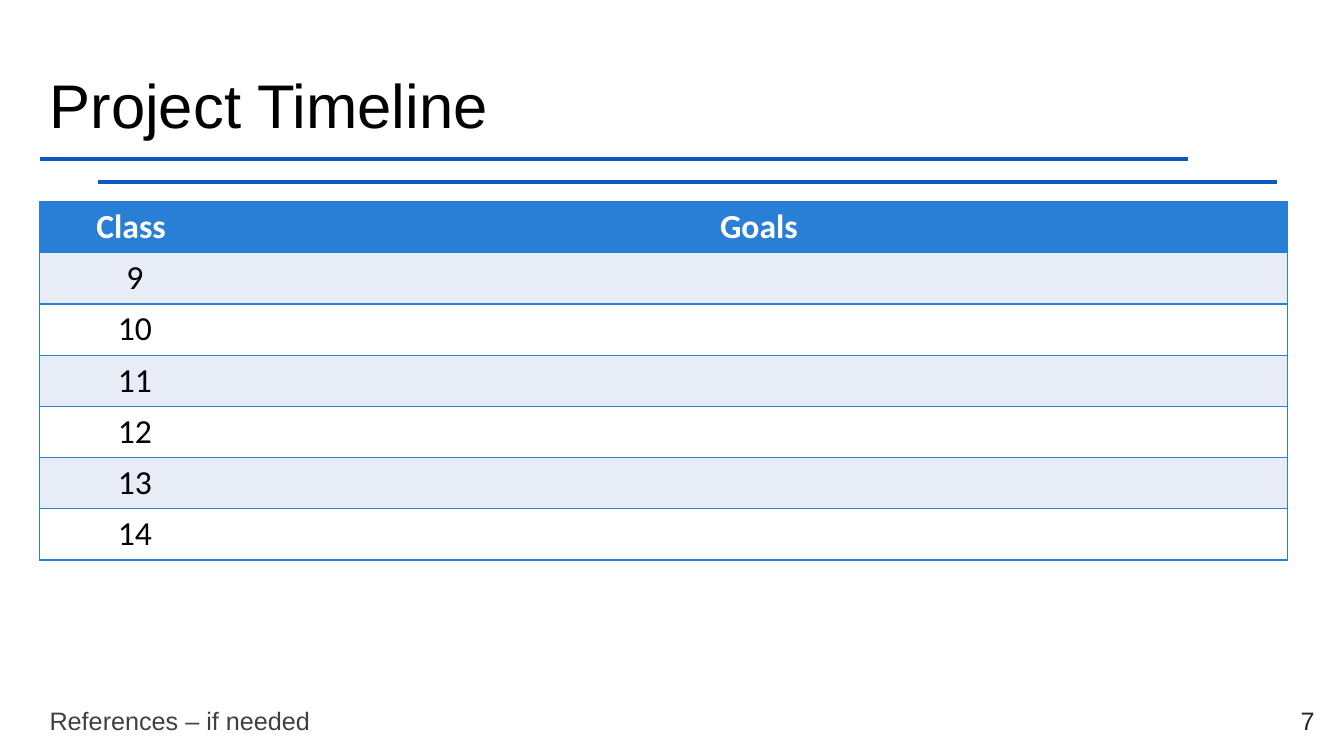
import pptx
import pptx.dml.color
import pptx.enum.shapes
import pptx.enum.text
import pptx.oxml
import pptx.oxml.ns
import pptx.util
from dataclasses import dataclass
from pptx.util import Cm

TITLE = "Project Timeline"
REFERENCES = "References – if needed"
PAGE_NUMBER = "7"
TIMELINE = [
    ("Class ", "Goals"),
    ("9", ""),
    ("10", ""),
    ("11", ""),
    ("12", ""),
    ("13", ""),
    ("14", ""),
]


@dataclass(frozen=True)
class Theme:
    heading_font: str = "Arial"
    table_font: str = "Calibri"
    title_size: int = 44
    table_size: int = 24
    footer_size: int = 18
    rule_width: int = 3
    border_width: int = 1
    black: str = "000000"
    white: str = "FFFFFF"
    rule: str = "0E58C4"
    accent: str = "297FD5"
    band: str = "E8ECF7"
    reference: str = "404040"
    number: str = "262626"


THEME = Theme()
ALIGN = pptx.enum.text.PP_ALIGN

SLIDE_WIDTH, SLIDE_HEIGHT = 33.87, 19.05
LEFT = 1.0
CONTENT_WIDTH = 32.38
NUMBER_WIDTH = 1.57
TITLE_TOP, TITLE_HEIGHT = 0.89, 3.68
FOOTER_TOP, FOOTER_HEIGHT = 17.65, 1.02
RULES = [(LEFT, 29.95, 4.0), (2.47, 32.19, 4.58)]  # start, end, height on slide
TABLE_TOP = 5.08
COLUMN_WIDTHS = (4.8, 26.65)
ROW_HEIGHT = 1.29


def color(value):
    return pptx.dml.color.RGBColor.from_string(value)


def add_text(paragraph, text, font, size, text_color, bold=False):
    run = paragraph.add_run()
    run.text = text
    run.font.name = font
    run.font.size = pptx.util.Pt(size)
    run.font.bold = bold
    run.font.color.rgb = color(text_color)


def add_label(slide, text, box, size, text_color, alignment=ALIGN.LEFT):
    frame = slide.shapes.add_textbox(*map(Cm, box)).text_frame
    frame.word_wrap = True
    frame.vertical_anchor = pptx.enum.text.MSO_ANCHOR.MIDDLE
    paragraph = frame.paragraphs[0]
    paragraph.alignment = alignment
    add_text(paragraph, text, THEME.heading_font, size, text_color)
    return paragraph


def add_rule(slide, start, end, height):
    rule = slide.shapes.add_connector(
        pptx.enum.shapes.MSO_CONNECTOR.STRAIGHT, Cm(start), Cm(height), Cm(end), Cm(height))
    rule.line.color.rgb = color(THEME.rule)
    rule.line.width = pptx.util.Pt(THEME.rule_width)
    properties = rule._element.spPr
    properties.append(properties.makeelement(pptx.oxml.ns.qn("a:effectLst"), {}))


def set_borders(cell, visible_sides):
    """Draw the given sides of a cell and hide the others."""
    properties = cell._tc.get_or_add_tcPr()
    width = pptx.util.Pt(THEME.border_width)
    for side in "LRTB":
        if side in visible_sides:
            fill = f'<a:solidFill><a:srgbClr val="{THEME.accent}"/></a:solidFill>'
        else:
            fill = "<a:noFill/>"
        properties.append(pptx.oxml.parse_xml(
            f'<a:ln{side} {pptx.oxml.ns.nsdecls("a")} w="{width}">{fill}</a:ln{side}>'))


def add_timeline(slide):
    table = slide.shapes.add_table(
        len(TIMELINE), len(COLUMN_WIDTHS), Cm(LEFT), Cm(TABLE_TOP),
        Cm(sum(COLUMN_WIDTHS)), Cm(ROW_HEIGHT * len(TIMELINE))).table
    for column, width in zip(table.columns, COLUMN_WIDTHS):
        column.width = Cm(width)
    for row_index, values in enumerate(TIMELINE):
        table.rows[row_index].height = Cm(ROW_HEIGHT)
        header = row_index == 0
        band = THEME.band if row_index % 2 else THEME.white
        for column_index, value in enumerate(values):
            cell = table.cell(row_index, column_index)
            set_borders(cell, "LTB" if column_index == 0 else "RTB")
            cell.fill.solid()
            cell.fill.fore_color.rgb = color(THEME.accent if header else band)
            paragraph = cell.text_frame.paragraphs[0]
            paragraph.alignment = ALIGN.CENTER
            if value:
                add_text(paragraph, value, THEME.table_font, THEME.table_size,
                         THEME.white if header else THEME.black, header)


def main():
    presentation = pptx.Presentation()
    presentation.slide_width = Cm(SLIDE_WIDTH)
    presentation.slide_height = Cm(SLIDE_HEIGHT)
    slide = presentation.slides.add_slide(presentation.slide_layouts[6])

    for rule in RULES:
        add_rule(slide, *rule)
    title = add_label(slide, TITLE, (LEFT, TITLE_TOP, CONTENT_WIDTH, TITLE_HEIGHT),
                      THEME.title_size, THEME.black)
    title.line_spacing = 0.9

    reference_width = CONTENT_WIDTH - NUMBER_WIDTH
    add_label(slide, PAGE_NUMBER,
              (LEFT + reference_width, FOOTER_TOP, NUMBER_WIDTH, FOOTER_HEIGHT),
              THEME.footer_size, THEME.number, ALIGN.RIGHT)
    add_label(slide, REFERENCES, (LEFT, FOOTER_TOP, reference_width, FOOTER_HEIGHT),
              THEME.footer_size, THEME.reference)
    add_timeline(slide)
    presentation.save("out.pptx")


if __name__ == "__main__":
    main()
